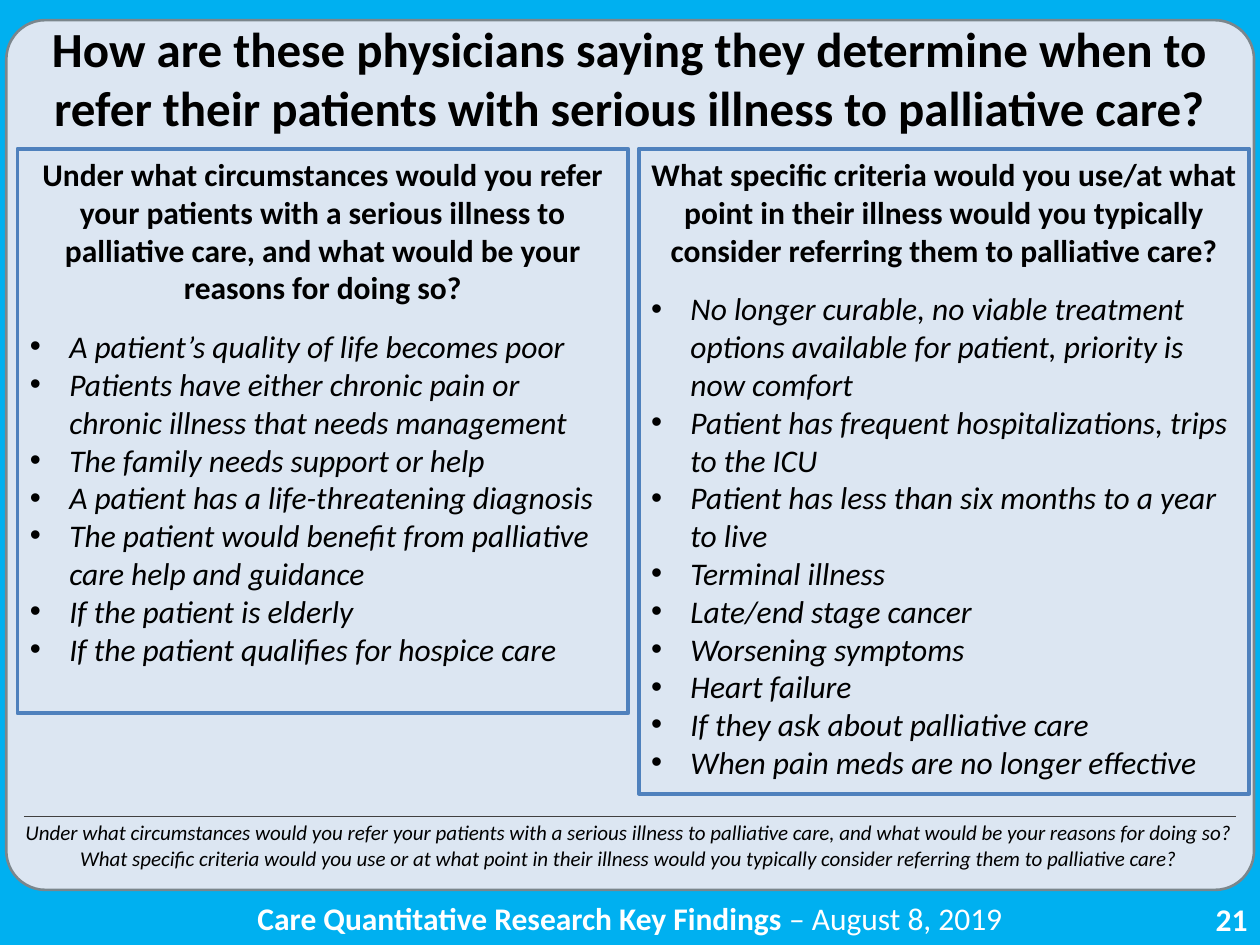
from lxml.etree import SubElement
from pptx import Presentation
from pptx.dml.color import RGBColor
from pptx.enum.shapes import MSO_CONNECTOR, MSO_SHAPE
from pptx.enum.text import MSO_ANCHOR, PP_ALIGN
from pptx.oxml.ns import qn
from pptx.util import Pt

FONT = "Calibri"
BLACK, WHITE = "000000", "FFFFFF"
LEFT = (
    "Under what circumstances would you refer your patients with a serious illness "
    "to palliative care, and what would be your reasons for doing so?",
    [
        "A patient’s quality of life becomes poor",
        "Patients have either chronic pain or chronic illness that needs management",
        "The family needs support or help",
        "A patient has a life-threatening diagnosis",
        "The patient would benefit from palliative care help and guidance",
        "If the patient is elderly",
        "If the patient qualifies for hospice care",
    ],
)
RIGHT = (
    "What specific criteria would you use/at what point in their illness would you "
    "typically consider referring them to palliative care?",
    [
        "No longer curable, no viable treatment options available for patient, "
        "priority is now comfort",
        "Patient has frequent hospitalizations, trips to the ICU",
        "Patient has less than six months to a year to live",
        "Terminal illness",
        "Late/end stage cancer",
        "Worsening symptoms",
        "Heart failure",
        "If they ask about palliative care",
        "When pain meds are no longer effective",
    ],
)
TITLE = (
    "How are these physicians saying they determine when to refer their patients "
    "with serious illness to palliative care?"
)
NOTE = (
    LEFT[0] + " What specific criteria would you use or at what point in their illness "
    "would you typically consider referring them to palliative care?"
)


def color(code):
    """Turn a hex string into a colour."""
    return RGBColor.from_string(code)


def add_run(para, text, size, code=BLACK, bold=False, italic=False):
    """Add one styled run to a paragraph."""
    run = para.add_run()
    run.text = text
    font = run.font
    font.name, font.size = FONT, Pt(size)
    font.bold, font.italic = bold, italic
    font.color.rgb = color(code)


def add_text(slide, box, align=PP_ALIGN.CENTER):
    """Add a wrapped text box and return its frame."""
    frame = slide.shapes.add_textbox(*map(Pt, box)).text_frame
    frame.word_wrap = True
    frame.paragraphs[0].alignment = align
    return frame


def add_box(slide, kind, box, line, width, fill=None):
    """Add an outlined shape, filled if a colour is given."""
    shape = slide.shapes.add_shape(kind, *map(Pt, box))
    shape.shadow.inherit = False
    if fill:
        shape.fill.solid()
        shape.fill.fore_color.rgb = color(fill)
    else:
        shape.fill.background()
    shape.line.color.rgb = color(line)
    shape.line.width = Pt(width)
    return shape


def add_bullet(para, indent):
    """Give a paragraph a hanging round bullet."""
    props = para._p.get_or_add_pPr()
    props.set("marL", str(Pt(indent)))
    props.set("indent", str(-Pt(indent)))
    SubElement(props, qn("a:buFont")).set("typeface", "Arial")
    SubElement(props, qn("a:buChar")).set("char", "•")


def add_panel(slide, left, height, content):
    """Add a framed question with its bulleted answers."""
    head, items = content
    box = (left, 85, 349, height)
    frame = add_box(slide, MSO_SHAPE.RECTANGLE, box, "4F81BD", 2.25).text_frame
    frame.word_wrap = True
    frame.vertical_anchor = MSO_ANCHOR.TOP
    para = frame.paragraphs[0]
    para.alignment = PP_ALIGN.CENTER
    para.space_after = Pt(12)
    add_run(para, head, 18, bold=True)
    for item in items:
        para = frame.add_paragraph()
        para.alignment = PP_ALIGN.LEFT
        add_bullet(para, 22.5)
        add_run(para, item, 18, italic=True)


def add_rule(slide, left, right, top):
    """Add a thin horizontal rule."""
    rule = slide.shapes.add_connector(
        MSO_CONNECTOR.STRAIGHT, Pt(left), Pt(top), Pt(right), Pt(top)
    )
    rule.line.color.rgb = color("404040")
    rule.line.width = Pt(0.75)
    SubElement(rule._element.spPr, qn("a:effectLst"))


def main():
    """Build and save the slide."""
    deck = Presentation()
    deck.slide_width, deck.slide_height = Pt(720), Pt(540)
    slide = deck.slides.add_slide(deck.slide_layouts[6])
    back = slide.background.fill
    back.solid()
    back.fore_color.rgb = color("00B0F0")

    page = add_text(slide, (558, 511, 162, 29), PP_ALIGN.RIGHT)
    add_run(page.paragraphs[0], "21", 18, WHITE, bold=True)
    foot = add_text(slide, (57, 510, 606, 29)).paragraphs[0]
    add_run(foot, "Care Quantitative Research Key Findings ", 18, WHITE, bold=True)
    add_run(foot, "– August 8, 2019", 18, WHITE)

    card = add_box(
        slide, MSO_SHAPE.ROUNDED_RECTANGLE, (3.6, 11.5, 713, 497), "7B868C", 1.5, "DCE6F2"
    )
    card.adjustments[0] = 0.045

    title = add_text(slide, (5, 13.7, 709, 61))
    title.vertical_anchor = MSO_ANCHOR.MIDDLE
    title.margin_left = title.margin_right = title.margin_top = title.margin_bottom = 0
    add_run(title.paragraphs[0], TITLE, 28, bold=True)

    add_panel(slide, 10, 322.5, LEFT)
    add_panel(slide, 365, 368.5, RIGHT)

    note = add_text(slide, (5, 465, 709, 36))
    add_run(note.paragraphs[0], NOTE, 12, italic=True)
    add_rule(slide, 13.7, 706.3, 466.5)
    deck.save("out.pptx")


if __name__ == "__main__":
    main()
